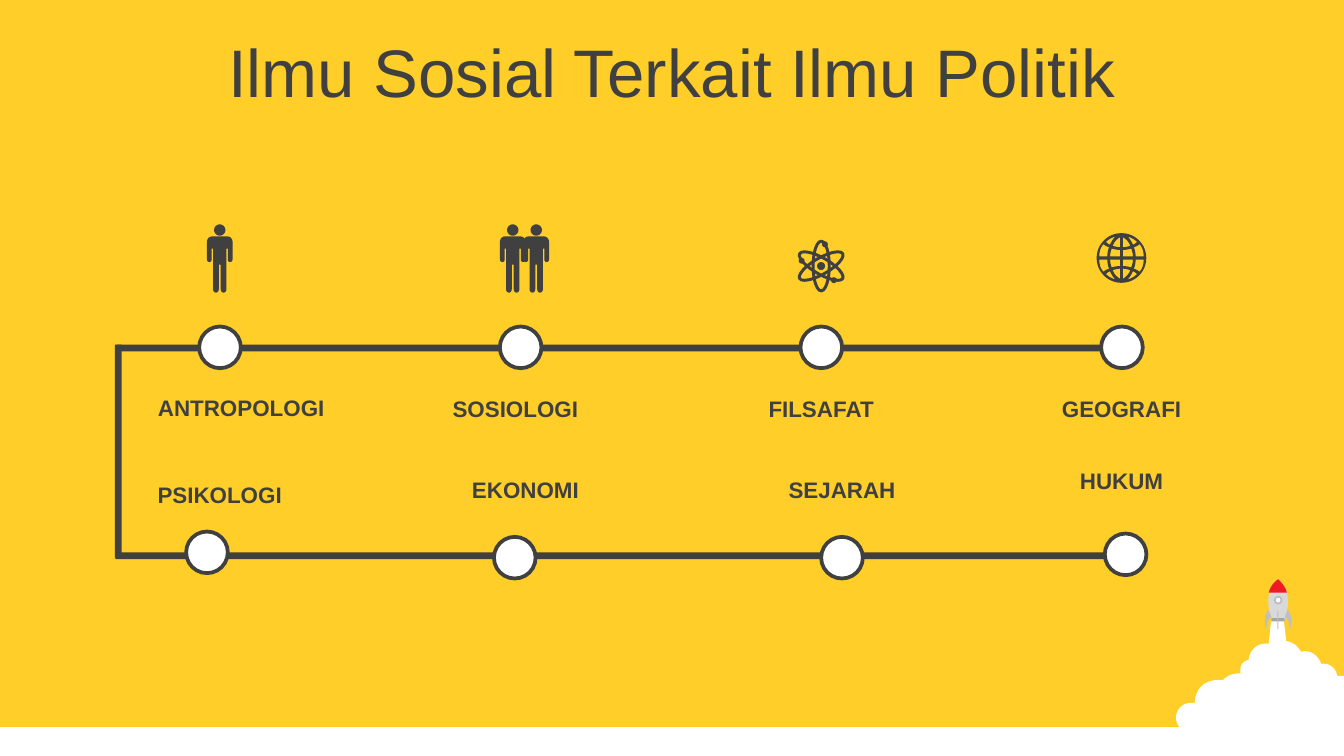
from dataclasses import dataclass
from math import cos, pi, sin

from pptx import Presentation
from pptx.dml.color import RGBColor
from pptx.enum.shapes import MSO_SHAPE
from pptx.enum.text import MSO_ANCHOR, MSO_AUTO_SIZE, PP_ALIGN
from pptx.util import Inches, Pt

RECT, OVAL = MSO_SHAPE.RECTANGLE, MSO_SHAPE.OVAL
CENTER, MIDDLE = PP_ALIGN.CENTER, MSO_ANCHOR.MIDDLE
FIT_SHAPE, NO_FIT = MSO_AUTO_SIZE.SHAPE_TO_FIT_TEXT, MSO_AUTO_SIZE.NONE
COLUMNS = 100


@dataclass(frozen=True)
class Theme:
    font: str = "Arial"
    title: int = 36
    label: int = 12
    sun: str = "FFCE29"
    ink: str = "404040"
    white: str = "FFFFFF"
    hull: str = "D9D9D9"
    band: str = "A6A6A6"
    trim: str = "BFBFBF"
    nose: str = "ED1C24"


def rgb(value):
    return RGBColor.from_string(value)


def circle(x, y, radius, steps=48):
    angles = [2 * pi * i / steps for i in range(steps)]
    return [(x + radius * cos(a), y + radius * sin(a)) for a in angles]


def flatten(segments, steps=8):
    points = []
    for segment in segments:
        if len(segment) == 2:
            points.append(segment)
            continue
        x0, y0 = points[-1]
        x1, y1, x2, y2, x3, y3 = segment
        for i in range(1, steps + 1):
            t = i / steps
            a, b, c, d = (1 - t) ** 3, 3 * t * (1 - t) ** 2, 3 * t * t * (1 - t), t ** 3
            points.append((a * x0 + b * x1 + c * x2 + d * x3,
                           a * y0 + b * y1 + c * y2 + d * y3))
    return points


class Sketch:
    def __init__(self, deck, theme):
        self.theme = theme
        self.unit = deck.slide_width / COLUMNS
        self.slide = deck.slides.add_slide(deck.slide_layouts[6])
        background = self.slide.background.fill
        background.solid()
        background.fore_color.rgb = rgb(theme.sun)

    def grid(self, *lengths):
        return [round(length * self.unit) for length in lengths]

    def paint(self, shape, fill, line, weight):
        shape.shadow.inherit = False
        for part, color in ((shape.fill, fill), (shape.line.fill, line)):
            if color:
                part.solid()
                part.fore_color.rgb = rgb(color)
            else:
                part.background()
        if line:
            shape.line.width = Pt(weight)

    def preset(self, kind, box, fill=None, line=None, weight=2, rotation=0):
        shape = self.slide.shapes.add_shape(kind, *self.grid(*box))
        shape.rotation = rotation
        self.paint(shape, fill, line, weight)

    def dot(self, x, y, radius, fill):
        self.preset(OVAL, (x - radius, y - radius, 2 * radius, 2 * radius), fill)

    def outline(self, contours, fill, origin=(0, 0), flip=1):
        builder = None
        for contour in contours:
            points = [(self.unit * (origin[0] + flip * x), self.unit * (origin[1] + y))
                      for x, y in flatten(contour)]
            if builder is None:
                builder = self.slide.shapes.build_freeform(*points[0])
            else:
                builder.move_to(*points[0])
            builder.add_line_segments(points[1:], close=True)
        self.paint(builder.convert_to_shape(), fill, None, 0)

    def text(self, words, box, size, bold=False, **frame_format):
        frame = self.slide.shapes.add_textbox(*self.grid(*box)).text_frame
        for name, value in {"word_wrap": True, **frame_format}.items():
            setattr(frame, name, value)
        paragraph = frame.paragraphs[0]
        paragraph.alignment = CENTER
        run = paragraph.add_run()
        run.text = words
        for name, value in {"name": self.theme.font, "size": Pt(size), "bold": bold}.items():
            setattr(run.font, name, value)
        run.font.color.rgb = rgb(self.theme.ink)

    def person(self, x, y):
        body = [(-.6, .9), (.6, .9), (.8, .9, .95, 1.1, .95, 1.3), (.95, 2.6),
                (.95, 2.87, .6, 2.87, .6, 2.6), (.6, 1.8), (.5, 1.8), (.5, 4.8),
                (.5, 5.17, .07, 5.17, .07, 4.8), (.07, 3), (-.07, 3), (-.07, 4.8),
                (-.07, 5.17, -.5, 5.17, -.5, 4.8), (-.5, 1.8), (-.6, 1.8), (-.6, 2.6),
                (-.6, 2.87, -.95, 2.87, -.95, 2.6), (-.95, 1.3), (-.95, 1.1, -.8, .9, -.6, .9)]
        self.outline([body, circle(0, .42, .42)], self.theme.ink, (x, y))

    def atom(self, x, y):
        for tilt in (0, 60, 120):
            self.preset(OVAL, (x - .6, y - 1.85, 1.2, 3.7), None, self.theme.ink, 1.6, tilt)
        for dx, dy, radius in ((0, 0, .3), (.28, -1.62, .22), (-1.45, -.4, .22), (.95, 1.05, .22)):
            self.dot(x + dx, y + dy, radius, self.theme.ink)

    def globe(self, x, y):
        quarter = [
            [(.85, 1), (.75, 1.2, .65, 1.4, .45, 1.6), (.75, 1.5, .95, 1.4, 1.15, 1.2),
             (1.05, 1.1, .95, 1, .85, 1)],
            [(.1, .8), (.1, 1.55), (.35, 1.4, .55, 1.2, .65, .9), (.45, .85, .3, .8, .1, .8)],
            [(1.05, .12), (1.05, .4, 1, .6, .92, .8), (1.1, .85, 1.25, .95, 1.35, 1.02),
             (1.55, .8, 1.65, .5, 1.65, .12)],
            [(.1, .12), (.1, .6), (.35, .6, .55, .65, .73, .7), (.8, .5, .85, .3, .85, .12)],
        ]
        windows = [[tuple(v * (sx, sy)[i % 2] for i, v in enumerate(segment)) for segment in cell]
                   for sx in (1, -1) for sy in (1, -1) for cell in quarter]
        self.outline([circle(0, 0, 1.85)] + windows, self.theme.ink, (x, y))

    def rocket(self):
        theme = self.theme
        cloud = [
            (94.6, 45.9), (95.5, 45.9), (95.7, 47.7), (96.2, 47.8, 96.5, 48, 96.8, 48.5),
            (97.5, 48.3, 98.1, 48.8, 98.3, 49.4), (98.9, 49.3, 99.4, 49.7, 99.5, 50.3),
            (100, 50.3), (100, 56), (99.4, 56, 99, 55.9, 98.6, 55.6),
            (98.1, 56, 97.3, 55.9, 96.9, 55.4), (96.6, 56, 95.7, 56, 95.1, 55.5),
            (93.8, 56.4, 92.1, 56.2, 91.3, 55.1), (90.6, 55.5, 89.4, 55.2, 89.3, 54.3),
            (89.1, 54.5, 88.9, 54.5, 88.6, 54.5), (88, 54.5, 87.5, 54, 87.5, 53.4),
            (87.5, 52.8, 88, 52.3, 88.6, 52.3), (88.9, 52.3),
            (88.9, 51.3, 89.6, 50.6, 90.6, 50.6), (91, 50.6),
            (91.4, 50.2, 91.8, 50.1, 92.3, 50.1), (92.2, 49.5, 92.5, 49.2, 92.9, 49.1),
            (93, 48.3, 93.6, 47.8, 94.4, 47.9)]
        hull = [(94.6, 46.2), (94.4, 45.3, 94, 44, 95.1, 43.1), (96.2, 44.1, 95.8, 45.4, 95.6, 46.2)]
        nose = [(95.1, 43.1), (95.4, 43.4, 95.65, 43.7, 95.75, 44.1), (94.4, 44.1),
                (94.5, 43.7, 94.7, 43.4, 95.1, 43.1)]
        fin = [(-.7, 0), (-.5, .5), (-.9, .7, -.8, 1.2, -.9, 1.4), (-1, 1.1, -1.1, .3, -.7, 0)]
        self.outline([cloud], theme.white)
        self.outline([hull], theme.hull)
        self.preset(RECT, (94.6, 46, 1, .25), theme.band)
        self.outline([nose], theme.nose)
        self.preset(OVAL, (94.85, 44.4, .5, .5), theme.white, theme.trim, 1)
        self.preset(RECT, (95.05, 45.5, .08, 1.3), theme.trim)
        for side in (1, -1):
            self.outline([fin], theme.trim, (95.1, 45.4), side)


def main():
    deck = Presentation()
    deck.slide_width = Inches(10)
    deck.slide_height = deck.slide_width * 9 // 16
    theme = Theme()
    sketch = Sketch(deck, theme)

    sketch.preset(RECT, (0, 54.1, COLUMNS, 2.15), theme.white)
    sketch.rocket()
    sketch.text("Ilmu Sosial Terkait Ilmu Politik", (0, 2.1, COLUMNS, 6.3), theme.title,
                vertical_anchor=MIDDLE, auto_size=NO_FIT)

    for track in ((8.7, 25.65, 75.2, .5), (8.6, 41.1, 75.3, .5), (8.55, 25.65, .5, 15.9)):
        sketch.preset(RECT, track, theme.ink)

    upper_labels = (("ANTROPOLOGI", 17.95, 28.85), ("SOSIOLOGI", 38.35, 28.9),
                    ("FILSAFAT", 61.1, 28.9), ("GEOGRAFI", 83.45, 28.9))
    lower_labels = (("PSIKOLOGI", 16.35, 35.3), ("EKONOMI", 39.1, 34.95),
                    ("SEJARAH", 62.65, 34.95), ("HUKUM", 83.45, 34.3))
    upper_nodes = [(14.82 + 22.37 * i, 24.3) for i in range(4)]
    lower_nodes = [(13.85, 39.55), (36.75, 39.95), (61.1, 39.95), (82.2, 39.7)]
    for left, top in upper_nodes + lower_nodes:
        sketch.preset(OVAL, (left, top, 3.1, 3.1), theme.white, theme.ink)
    for words, middle, top in upper_labels + lower_labels:
        sketch.text(words, (middle - 7.25, top, 14.5, 3), theme.label, True, auto_size=FIT_SHAPE)

    for x in (16.35, 38.15, 39.9):
        sketch.person(x, 16.7)
    sketch.atom(61.1, 19.8)
    sketch.globe(83.45, 19.2)
    deck.save("out.pptx")


if __name__ == "__main__":
    main()
